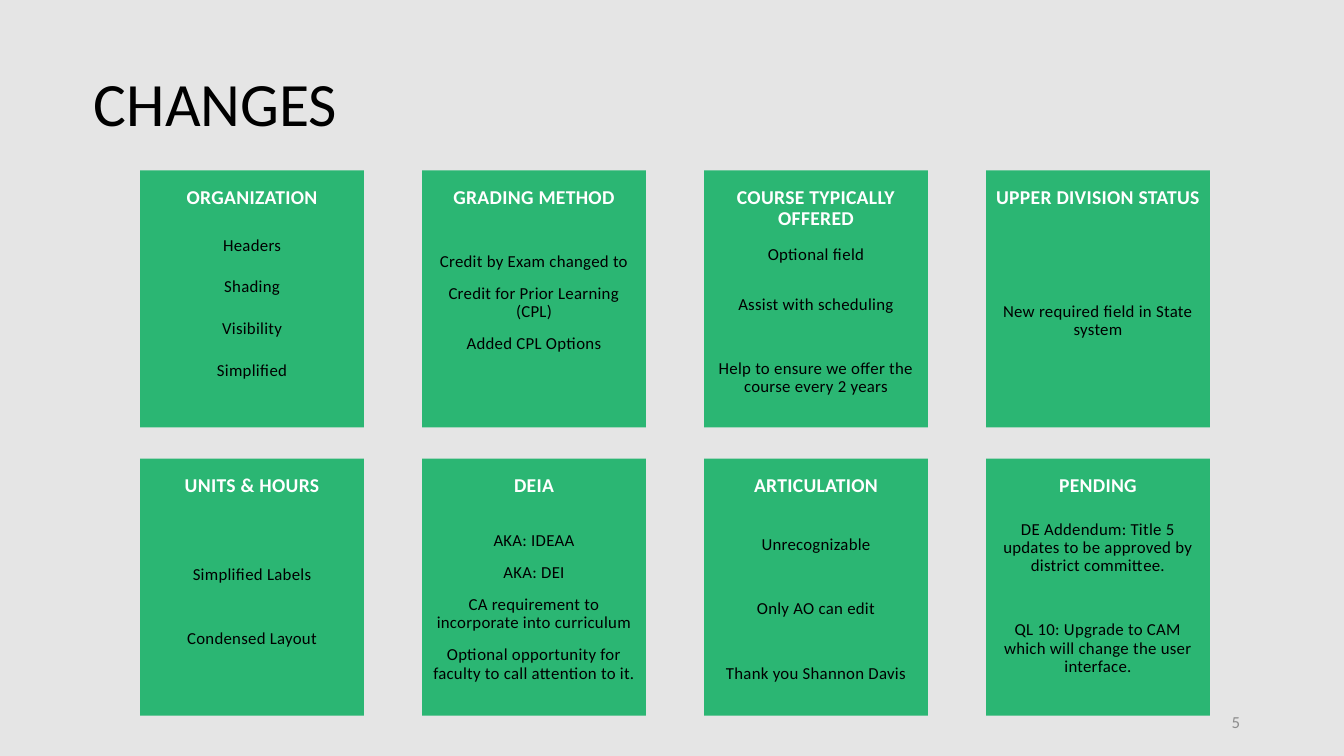
from pptx import Presentation
from pptx import util as u
from pptx.dml import color
from pptx.enum import shapes, text

COLORS = {
    "background": "E5E5E5",
    "card": "2BB673",
    "heading": "FFFFFF",
    "body": "000000",
    "number": "8C8C8C",
}

# Per card: heading, body offset below the card's top (inches), room kept
# free under the body (points), then (line, space before in points).
CARDS = [
    [
        ("ORGANIZATION", 0.5, 15, [
            ("Headers", 2), ("Shading", 17), ("Visibility", 17), ("Simplified", 17)]),
        ("GRADING METHOD", 0.5, 23, [
            ("Credit by Exam changed to", 10),
            ("Credit for Prior Learning (CPL)", 10),
            ("Added CPL Options", 10)]),
        ("COURSE TYPICALLY OFFERED", 0.52, 0, [
            ("Optional field", 5),
            ("Assist with scheduling", 23),
            ("Help to ensure we offer the course every 2 years", 33)]),
        ("UPPER DIVISION STATUS", 0.52, 0, [
            ("New required field in State system", 10)]),
    ],
    [
        ("UNITS & HOURS", 0.5, 0, [
            ("Simplified Labels", 10), ("Condensed Layout", 33)]),
        ("DEIA", 0.5, 0, [
            ("AKA: IDEAA", 10),
            ("AKA: DEI", 10),
            ("CA requirement to incorporate into curriculum", 10),
            ("Optional opportunity for faculty to call attention to it.", 10)]),
        ("ARTICULATION", 0.52, 0, [
            ("Unrecognizable", 10),
            ("Only AO can edit", 33),
            ("Thank you Shannon Davis", 33)]),
        ("PENDING", 0.41, 0, [
            ("DE Addendum: Title 5 updates to be approved by district committee.", 10),
            ("QL 10: Upgrade to CAM which will change the user interface.", 33)]),
    ],
]


class ChangesSlide:
    FONT = "Calibri"
    WIDTH, HEIGHT = 13.33, 7.5
    GRID_LEFT, GRID_TOP = 1.39, 1.69
    COLUMN_PITCH, ROW_PITCH = (9.78 - 1.39) / 3, 2.86
    CARD_WIDTH, CARD_HEIGHT, BODY_HEIGHT = 2.22, 2.55, 1.95

    def __init__(self, deck):
        deck.slide_width, deck.slide_height = u.Inches(self.WIDTH), u.Inches(self.HEIGHT)
        self.slide = deck.slides.add_slide(deck.slide_layouts[6])
        self.paint(self.slide.background.fill, "background")

    def paint(self, fill, role):
        fill.solid()
        fill.fore_color.rgb = color.RGBColor.from_string(COLORS[role])

    def styled_run(self, paragraph, words, role, size, align, bold=False, tracking=0):
        """Add one styled run; tracking is in hundredths of a point."""
        paragraph.alignment = align
        run = paragraph.add_run()
        run.text = words
        run.font.name, run.font.size, run.font.bold = self.FONT, u.Pt(size), bold
        run.font.color.rgb = color.RGBColor.from_string(COLORS[role])
        if tracking:
            run._r.get_or_add_rPr().set("spc", str(tracking))

    def text_frame(self, left, top, width, height):
        frame = self.slide.shapes.add_textbox(
            *(u.Inches(n) for n in (left, top, width, height))).text_frame
        frame.word_wrap = True
        frame.vertical_anchor = text.MSO_ANCHOR.MIDDLE
        return frame

    def label(self, words, role, size, align, x, y, w, h):
        """Place one line of text by shares of the slide's size."""
        frame = self.text_frame(x * self.WIDTH, y * self.HEIGHT,
                                w * self.WIDTH, h * self.HEIGHT)
        self.styled_run(frame.paragraphs[0], words, role, size, align)

    def card(self, column, row, heading, body_offset, room_below, lines):
        left = self.GRID_LEFT + column * self.COLUMN_PITCH
        top = self.GRID_TOP + row * self.ROW_PITCH
        self.panel(heading, left, top)
        self.body(lines, room_below, left, top + body_offset)

    def panel(self, heading, left, top):
        panel = self.slide.shapes.add_shape(
            shapes.MSO_SHAPE.RECTANGLE,
            *(u.Inches(n) for n in (left, top, self.CARD_WIDTH, self.CARD_HEIGHT)))
        panel.shadow.inherit = False
        self.paint(panel.fill, "card")
        panel.line.fill.background()
        frame = panel.text_frame
        frame.word_wrap = True
        frame.vertical_anchor = text.MSO_ANCHOR.TOP
        frame.margin_left = frame.margin_right = 0
        frame.margin_top = u.Inches(0.17)
        title = frame.paragraphs[0]
        title.line_spacing = 0.9
        self.styled_run(title, heading, "heading", 14, text.PP_ALIGN.CENTER, True, 20)

    def body(self, lines, room_below, left, top):
        frame = self.text_frame(left, top, self.CARD_WIDTH, self.BODY_HEIGHT)
        frame.margin_bottom = u.Inches(0.05) + u.Pt(room_below)
        for index, (words, space_before) in enumerate(lines):
            paragraph = frame.add_paragraph() if index else frame.paragraphs[0]
            paragraph.line_spacing = 0.9
            paragraph.space_before = u.Pt(space_before)
            self.styled_run(paragraph, words, "body", 12, text.PP_ALIGN.CENTER, tracking=20)


def main():
    deck = Presentation()
    changes = ChangesSlide(deck)
    changes.label("CHANGES", "body", 44, text.PP_ALIGN.LEFT, 1 / 16, 0.08, 7 / 8, 0.11)
    changes.label("5", "number", 12, text.PP_ALIGN.RIGHT, 0.71, 0.93, 0.22, 0.05)
    for row, cards in enumerate(CARDS):
        for column, card in enumerate(cards):
            changes.card(column, row, *card)
    deck.save("out.pptx")


if __name__ == "__main__":
    main()
